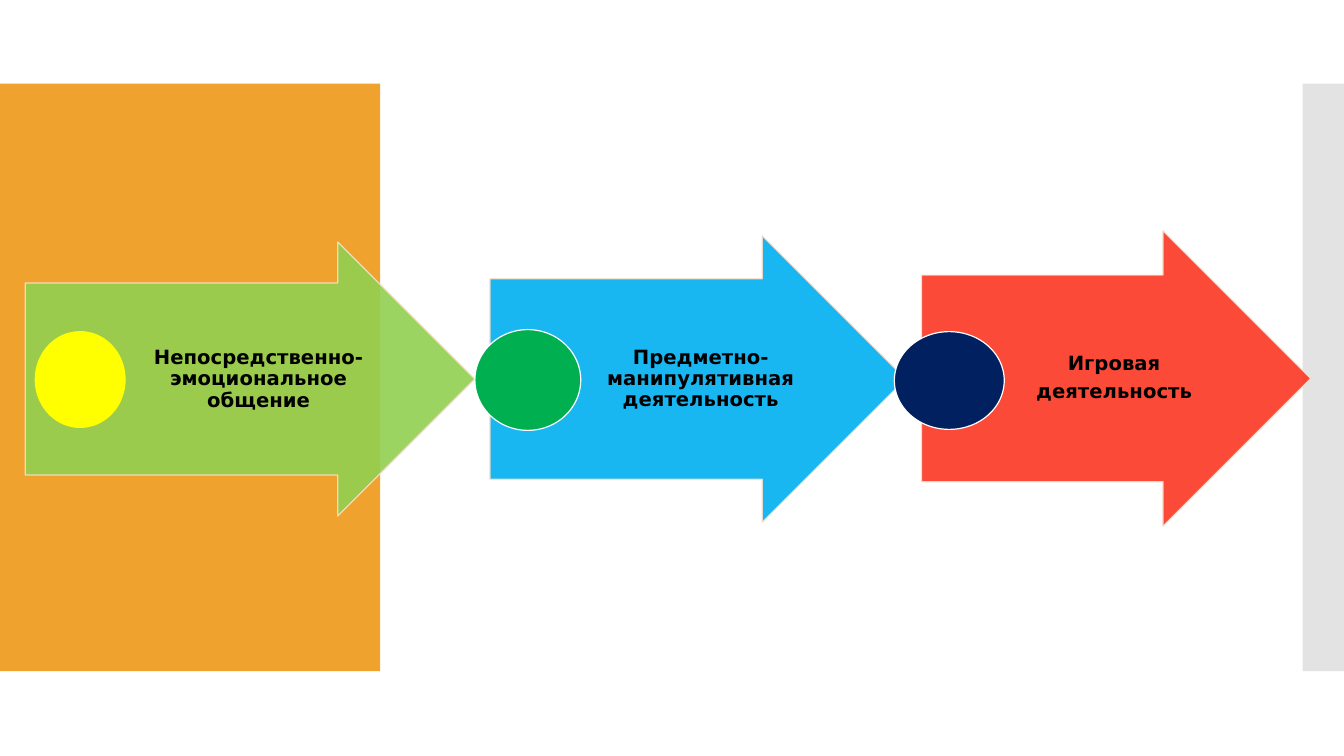
from lxml import etree
from pptx import Presentation
from pptx.dml.color import RGBColor
from pptx.enum.shapes import MSO_SHAPE
from pptx.enum.text import MSO_ANCHOR, PP_ALIGN
from pptx.oxml.ns import qn
from pptx.util import Inches, Pt

RECT = MSO_SHAPE.RECTANGLE
ARROW = MSO_SHAPE.RIGHT_ARROW
OVAL = MSO_SHAPE.OVAL
MIDDLE = MSO_ANCHOR.MIDDLE
CENTER = PP_ALIGN.CENTER
FONT = "DejaVu Sans"
COLORS = {
    "orange": "F0A22E", "gray": "C8C8C8", "cream": "F9E0CD",
    "lime": "92D050", "blue": "00B0F0", "red": "FB3823",
    "yellow": "FFFF00", "green": "00B050", "navy": "002060",
    "white": "FFFFFF", "black": "000000",
}
STAGES = [
    ((0.25, 2.4, 4.46, 2.72), "lime", (1.36, 2.81, 2.39, 1.91),
     ["Непосредственно-эмоциональное общение"],
     (0.35, 3.29, 0.89, 0.95), "yellow", "yellow"),
    ((4.86, 2.34, 4.12, 2.84), "blue", (5.89, 2.77, 2.1, 1.98),
     ["Предметно-манипулятивная деятельность"],
     (4.71, 3.27, 1.05, 1), "green", "white"),
    ((9.14, 2.29, 3.86, 2.93), "red", (10.1, 2.73, 1.88, 2.05),
     ["Игровая", "деятельность"],
     (8.87, 3.29, 1.09, 0.97), "navy", "white"),
]


def color(name):
    """Return the named colour."""
    return RGBColor.from_string(COLORS[name])


def add_form(slide, kind, box, fill, edge=None, alpha=100):
    """Add a filled shape with an optional edge and opacity in percent."""
    form = slide.shapes.add_shape(kind, *map(Inches, box))
    form.shadow.inherit = False
    form.fill.solid()
    form.fill.fore_color.rgb = color(fill)
    if edge:
        form.line.color.rgb = color(edge)
        form.line.width = Pt(0.85)
    else:
        form.line.fill.background()
    if alpha < 100:
        for tint in form.element.spPr.iter(qn("a:srgbClr")):
            etree.SubElement(tint, qn("a:alpha"), val=str(alpha * 1000))
    return form


def add_label(slide, box, lines):
    """Add a centred bold label, one paragraph per line."""
    frame = slide.shapes.add_textbox(*map(Inches, box)).text_frame
    frame.word_wrap = True
    frame.vertical_anchor = MIDDLE
    frame.margin_left, frame.margin_right = Inches(0.04), Inches(0.02)
    frame.margin_top = frame.margin_bottom = Inches(0.01)
    frame.text = "\n".join(lines)
    for para in frame.paragraphs:
        para.alignment = CENTER
        para.line_spacing = 0.9
        para.space_after = Pt(5)
        para.font.name = FONT
        para.font.size = Pt(14)
        para.font.bold = True
        para.font.color.rgb = color("black")


def add_stage(slide, body, fill, area, lines, spot, dot, ring):
    """Add an arrow with its label and round marker."""
    arrow = add_form(slide, ARROW, body, fill, "cream", 90)
    arrow.adjustments[0] = 0.7
    arrow.adjustments[1] = 0.5
    add_label(slide, area, lines)
    add_form(slide, OVAL, spot, dot, ring)


def main():
    """Build and save the slide."""
    deck = Presentation()
    deck.slide_width, deck.slide_height = Inches(13.33), Inches(7.5)
    slide = deck.slides.add_slide(deck.slide_layouts[6])
    add_form(slide, RECT, (0, 0.83, 3.77, 5.83), "orange")
    add_form(slide, RECT, (12.92, 0.83, 0.41, 5.83), "gray", alpha=50)
    for stage in STAGES:
        add_stage(slide, *stage)
    deck.save("out.pptx")


if __name__ == "__main__":
    main()
